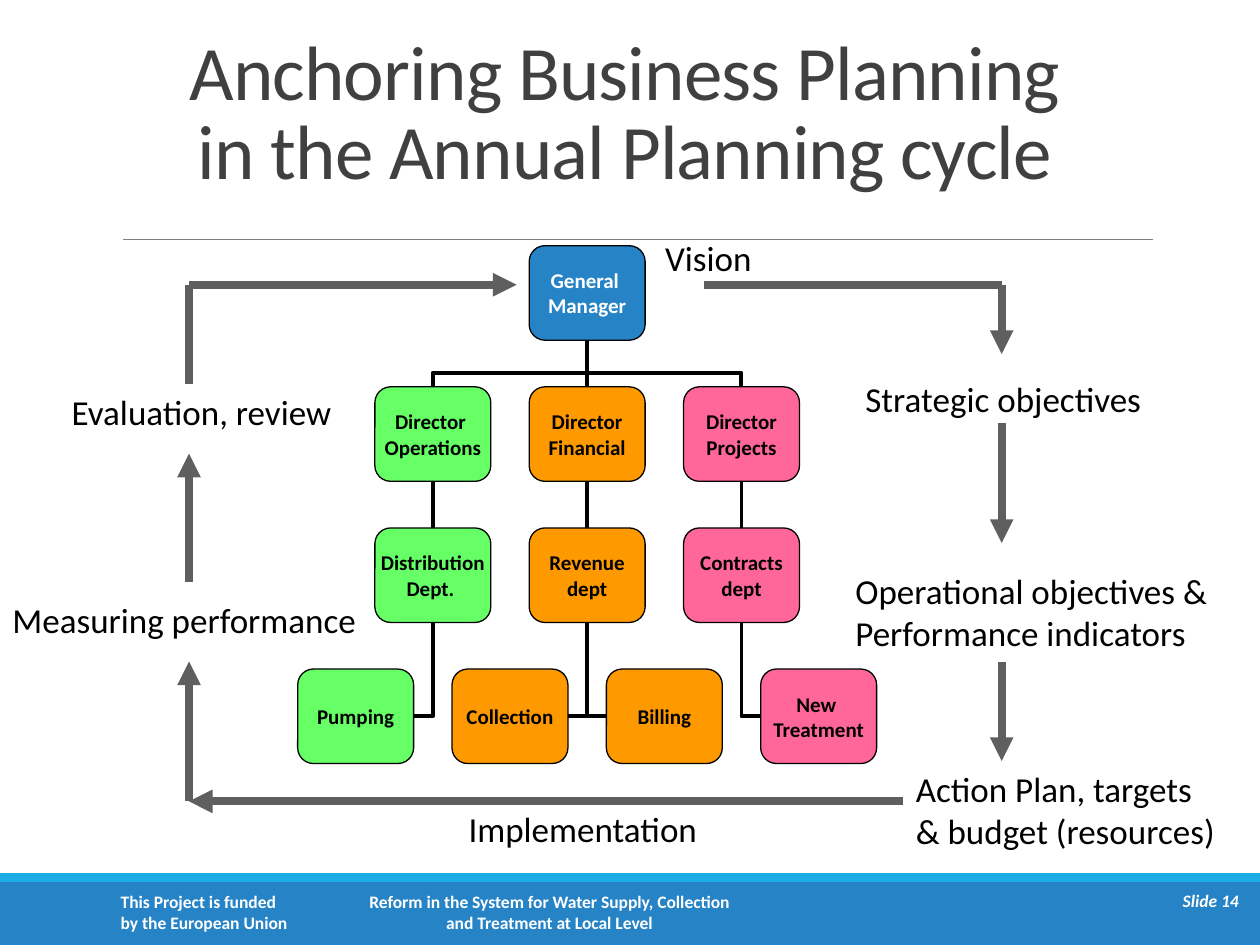
from lxml import etree
from pptx import Presentation
from pptx import util as u
from pptx.dml.color import RGBColor
from pptx.enum import shapes, text
from pptx.oxml.ns import qn

FONT = "Calibri"
BLACK, WHITE, GREY = "000000", "FFFFFF", "5F5F5F"
BLUE, GREEN, ORANGE, PINK = "2683C6", "66FF66", "FF9900", "FF6699"
LEFT, CENTER, RIGHT = text.PP_ALIGN.LEFT, text.PP_ALIGN.CENTER, text.PP_ALIGN.RIGHT

# Organisation chart grid: columns count from the middle, rows from the top
BOX_W, BOX_H = 0.92, 0.75
MIDDLE, COLUMN_STEP = 4.66, 1.225
TOP, ROW_STEP = 1.95, 1.12

# column, row, colour, lines
POSTS = [
    (0, 0, BLUE, ["General ", "Manager"]),
    (-1, 1, GREEN, ["Director ", "Operations"]),
    (0, 1, ORANGE, ["Director", "Financial"]),
    (1, 1, PINK, ["Director", "Projects"]),
    (-1, 2, GREEN, ["Distribution", "Dept. "]),
    (0, 2, ORANGE, ["Revenue", "dept"]),
    (1, 2, PINK, ["Contracts", "dept"]),
    (-1.5, 3, GREEN, ["Pumping"]),
    (-0.5, 3, ORANGE, ["Collection"]),
    (0.5, 3, ORANGE, ["Billing"]),
    (1.5, 3, PINK, ["New ", "Treatment"]),
]

# Planning cycle: x1, y1, x2, y2, arrowhead
CYCLE_LINES = [
    (5.59, 2.26, 7.95, 2.26, False),
    (7.95, 2.26, 7.95, 2.81, True),
    (7.95, 3.36, 7.95, 4.31, True),
    (7.95, 5.25, 7.95, 6.04, True),
    (7.17, 6.36, 1.5, 6.36, True),
    (1.5, 6.36, 1.5, 5.25, True),
    (1.5, 4.62, 1.5, 3.6, True),
    (1.5, 2.26, 4.1, 2.26, True),
    (1.5, 3.05, 1.5, 2.26, False),
]

# left, top, width, height, lines
CYCLE_STEPS = [
    (5.18, 1.83, 0.9, 0.44, ["Vision"]),
    (6.77, 2.95, 2.46, 0.44, ["Strategic objectives"]),
    (6.69, 4.47, 3.09, 0.77, ["Operational objectives &", "Performance indicators"]),
    (7.17, 6.04, 2.64, 0.77, ["Action Plan, targets", "& budget (resources)"]),
    (3.62, 6.36, 2.08, 0.44, ["Implementation"]),
    (0, 4.7, 3.01, 0.44, ["Measuring performance"]),
    (0.47, 3.05, 2.34, 0.44, ["Evaluation, review"]),
]


def rgb(value):
    return RGBColor.from_string(value)


def column_x(column):
    return MIDDLE + column * COLUMN_STEP


def row_y(row):
    return TOP + row * ROW_STEP


def add_run(paragraph, words, size, color, bold=False, italic=False):
    run = paragraph.add_run()
    run.text = words
    run.font.name, run.font.size = FONT, u.Pt(size)
    run.font.bold, run.font.italic = bold, italic
    run.font.color.rgb = rgb(color)
    return run


def write_lines(frame, lines, size, color, align=LEFT, **style):
    for i, line in enumerate(lines):
        paragraph = frame.add_paragraph() if i else frame.paragraphs[0]
        paragraph.alignment = align
        add_run(paragraph, line, size, color, **style)


def add_label(slide, at, lines, size, color, wrap=False, middle=False, **style):
    frame = slide.shapes.add_textbox(*map(u.Inches, at)).text_frame
    frame.word_wrap = wrap
    if not wrap:
        frame.auto_size = text.MSO_AUTO_SIZE.SHAPE_TO_FIT_TEXT
    if middle:
        frame.vertical_anchor = text.MSO_ANCHOR.MIDDLE
    write_lines(frame, lines, size, color, **style)


def add_block(slide, kind, at, fill, outline=None):
    block = slide.shapes.add_shape(kind, *map(u.Inches, at))
    block.shadow.inherit = False
    block.fill.solid()
    block.fill.fore_color.rgb = rgb(fill)
    if outline:
        block.line.color.rgb = rgb(outline)
        block.line.width = u.Pt(0.75)
    else:
        block.line.fill.background()
    return block


def add_line(slide, ends, color, width, arrow=False, kind=shapes.MSO_CONNECTOR.STRAIGHT):
    line = slide.shapes.add_connector(kind, *map(u.Inches, ends))
    line.line.color.rgb = rgb(color)
    line.line.width = u.Pt(width)
    if arrow:
        etree.SubElement(line.line._get_or_add_ln(), qn("a:tailEnd"), type="triangle")
    etree.SubElement(line._element.spPr, qn("a:effectLst"))
    return line


def add_corner(slide, ends):
    """One bend: sideways first, then up."""
    corner = add_line(slide, ends, BLACK, 2.25, kind=shapes.MSO_CONNECTOR.ELBOW)
    corner._element.spPr.find(qn("a:prstGeom")).set("prst", "bentConnector2")


def add_branch(slide, x1, y1, x2, y2):
    """Two bends: up, across to the manager's column, up again."""
    rise, span = y1 - y2, abs(x2 - x1)
    left, top = (x1 + x2 - rise) / 2, (y1 + y2 - span) / 2
    sides = (left + rise, left) if x1 > x2 else (left, left + rise)
    branch = add_line(slide, (sides[0], top, sides[1], top + span), BLACK, 2.25,
                      kind=shapes.MSO_CONNECTOR.ELBOW)
    properties = branch._element.spPr
    turn = 90 if x1 > x2 else 270
    properties.find(qn("a:xfrm")).set("rot", str(turn * 60000))
    guides = properties.find(qn("a:prstGeom")).get_or_add_avLst()
    etree.SubElement(guides, qn("a:gd"), name="adj1", fmla="val 30400")


def add_post(slide, column, row, fill, lines):
    at = (column_x(column) - BOX_W / 2, row_y(row), BOX_W, BOX_H)
    post = add_block(slide, shapes.MSO_SHAPE.ROUNDED_RECTANGLE, at, fill, BLACK)
    frame = post.text_frame
    frame.margin_left = frame.margin_right = frame.margin_top = frame.margin_bottom = 0
    frame.word_wrap = False
    frame.vertical_anchor = text.MSO_ANCHOR.MIDDLE
    color = WHITE if fill == BLUE else BLACK
    write_lines(frame, lines, 12, color, align=CENTER, bold=True)


def add_title(slide):
    frame = slide.shapes.add_textbox(*map(u.Inches, (0.9, 0.13, 8.25, 1.59))).text_frame
    frame.word_wrap = True
    frame.vertical_anchor = text.MSO_ANCHOR.MIDDLE
    heading = frame.paragraphs[0]
    heading.alignment, heading.line_spacing = CENTER, 0.85
    for i, line in enumerate(["Anchoring Business Planning ", "in the Annual Planning cycle "]):
        if i:
            heading.add_line_break()
        run = add_run(heading, line, 44, "404040")
        run.font._element.set("spc", "-50")
    add_line(slide, (0.98, 1.9, 9.15, 1.9), "808080", 0.5)


def add_footer(slide):
    add_block(slide, shapes.MSO_SHAPE.RECTANGLE, (0, 7, 10, 0.5), BLUE)
    add_block(slide, shapes.MSO_SHAPE.RECTANGLE, (0, 6.93, 10, 0.07), "1CADE4")
    add_label(slide, (0.86, 7.02, 1.54, 0.44),
              ["This Project is funded", "by the European Union"], 10, WHITE, bold=True)
    add_label(slide, (2.8, 7.04, 3.12, 0.4),
              ["Reform in the System for Water Supply, Collection and Treatment at Local Level"],
              10, WHITE, wrap=True, middle=True, align=CENTER, bold=True)
    add_label(slide, (9.07, 7.02, 0.86, 0.25), ["Slide 14"], 10, WHITE,
              wrap=True, middle=True, align=RIGHT, bold=True, italic=True)


def add_organisation(slide):
    # Units hang off the departments
    for unit, department in [(0.5, 0), (1.5, 1), (-0.5, 0), (-1.5, -1)]:
        side = BOX_W / 2 if unit < department else -BOX_W / 2
        add_corner(slide, (column_x(unit) + side, row_y(3) + BOX_H / 2,
                           column_x(department), row_y(2) + BOX_H))
    # Departments under directors, directors under the manager
    for column in (1, 0, -1):
        x = column_x(column)
        add_line(slide, (x, row_y(2), x, row_y(1) + BOX_H), BLACK, 2.25)
        if column:
            add_branch(slide, x, row_y(1), MIDDLE, TOP + BOX_H)
        else:
            add_line(slide, (x, row_y(1), x, TOP + BOX_H), BLACK, 2.25)
    for post in POSTS:
        add_post(slide, *post)


def add_cycle(slide):
    for *ends, arrow in CYCLE_LINES:
        add_line(slide, ends, GREY, 4.5, arrow)
    for *at, lines in CYCLE_STEPS:
        add_label(slide, at, lines, 20, BLACK)


def main():
    deck = Presentation()
    deck.slide_width, deck.slide_height = u.Inches(10), u.Inches(7.5)
    slide = deck.slides.add_slide(deck.slide_layouts[6])
    add_footer(slide)
    add_title(slide)
    add_organisation(slide)
    add_cycle(slide)
    deck.save("out.pptx")


if __name__ == "__main__":
    main()
